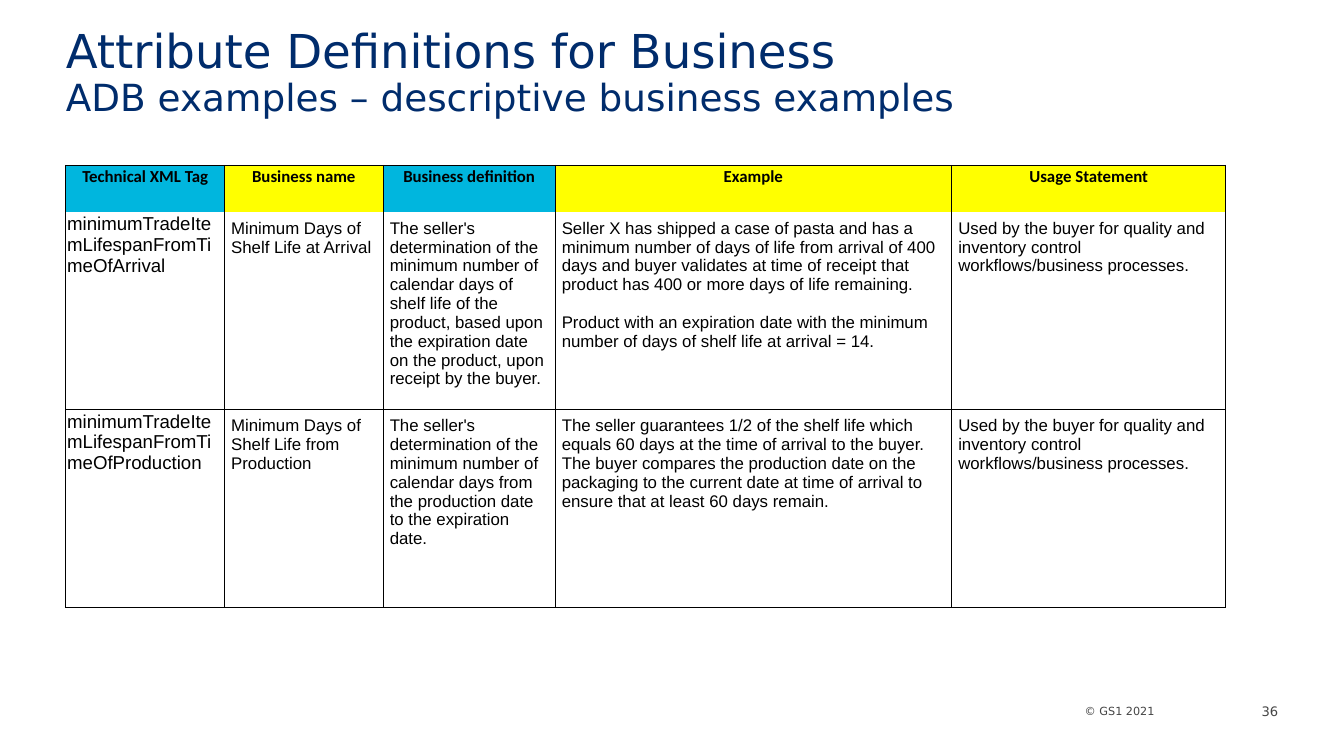
from dataclasses import dataclass

from lxml import etree
from pptx import Presentation
from pptx.dml.color import RGBColor
from pptx.enum.text import MSO_ANCHOR, MSO_AUTO_SIZE, PP_ALIGN
from pptx.oxml.ns import qn
from pptx.util import Inches, Pt

LEFT, CENTER, RIGHT = PP_ALIGN.LEFT, PP_ALIGN.CENTER, PP_ALIGN.RIGHT
TOP, MIDDLE = MSO_ANCHOR.TOP, MSO_ANCHOR.MIDDLE
TITLE_ONLY = 5


@dataclass(frozen=True)
class Theme:
    navy: str = "002C6C"
    gray: str = "454545"
    black: str = "000000"
    cyan: str = "00B6DE"
    yellow: str = "FFFF00"
    display_font: str = "DejaVu Sans"
    header_font: str = "Calibri"
    body_font: str = "Arial"
    title_size: int = 25
    subtitle_size: int = 20
    tag_size: int = 10
    cell_size: int = 9
    number_size: int = 7
    copyright_size: int = 6
    border_width: float = 0.5


theme = Theme()


def write(frame, lines, font, size, color, alignment=LEFT, bold=False, gap=0):
    """Fill a text frame with one paragraph per line, gap points apart."""
    frame.word_wrap = True
    for index, line in enumerate(lines):
        paragraph = frame.paragraphs[0] if index == 0 else frame.add_paragraph()
        paragraph.text = line
        paragraph.alignment = alignment
        if index:
            paragraph.space_before = Pt(gap)
        paragraph.font.name = font
        paragraph.font.size = Pt(size)
        paragraph.font.bold = bold
        paragraph.font.color.rgb = RGBColor.from_string(color)


def set_borders(cell, visible_sides):
    properties = cell._tc.get_or_add_tcPr()
    for side in "LRTB":
        line = etree.SubElement(properties, qn(f"a:ln{side}"), w=str(Pt(theme.border_width)))
        if side in visible_sides:
            fill = etree.SubElement(line, qn("a:solidFill"))
            etree.SubElement(fill, qn("a:srgbClr"), val=theme.black)
        else:
            etree.SubElement(line, qn("a:noFill"))


presentation = Presentation()
presentation.slide_width = Inches(10)
presentation.slide_height = Inches(10 * 9 / 16)
slide = presentation.slides.add_slide(presentation.slide_layouts[TITLE_ONLY])

# Title
title = slide.shapes.title
title.left, title.top = Inches(0.49), Inches(0.18)
title.width, title.height = Inches(9.02), Inches(0.74)
frame = title.text_frame
frame.auto_size = MSO_AUTO_SIZE.NONE
frame.vertical_anchor = MIDDLE
frame.margin_left, frame.margin_right = 0, Inches(0.1)
frame.margin_top = frame.margin_bottom = Inches(0.05)
write(frame, ["Attribute Definitions for Business"],
      theme.display_font, theme.title_size, theme.navy)
paragraph = frame.paragraphs[0]
paragraph.line_spacing = 0.9
paragraph.add_line_break()
subtitle = paragraph.add_run()
subtitle.text = "ADB examples – descriptive business examples"
subtitle.font.size = Pt(theme.subtitle_size)

# Attribute table
usage = "Used by the buyer for quality and inventory control workflows/business processes."
headers = [
    ("Technical XML Tag", theme.cyan),
    ("Business name", theme.yellow),
    ("Business definition", theme.cyan),
    ("Example", theme.yellow),
    ("Usage Statement", theme.yellow),
]
attributes = [
    [
        ["minimumTradeItemLifespanFromTimeOfArrival"],
        ["Minimum Days of Shelf Life at Arrival"],
        ["The seller's determination of the minimum number of calendar days of shelf life of "
         "the product, based upon the expiration date on the product, upon receipt by the buyer."],
        ["Seller X has shipped a case of pasta and has a minimum number of days of life from "
         "arrival of 400 days and buyer validates at time of receipt that product has 400 or "
         "more days of life remaining.",
         "Product with an expiration date with the minimum number of days of shelf life at "
         "arrival = 14."],
        [usage],
    ],
    [
        ["minimumTradeItemLifespanFromTimeOfProduction"],
        ["Minimum Days of Shelf Life from Production"],
        ["The seller's determination of the minimum number of calendar days from the "
         "production date to the expiration date."],
        ["The seller guarantees 1/2 of the shelf life which equals 60 days at the time of "
         "arrival to the buyer. The buyer compares the production date on the packaging to "
         "the current date at time of arrival to ensure that at least 60 days remain."],
        [usage],
    ],
]
column_widths = [1.18, 1.18, 1.28, 2.95, 2.04]
row_heights = [0.35, 1.47, 1.47]

table = slide.shapes.add_table(
    len(row_heights), len(column_widths), Inches(0.49), Inches(1.23),
    Inches(sum(column_widths)), Inches(sum(row_heights))).table
table.first_row = False
table.horz_banding = False
for column, width in zip(table.columns, column_widths):
    column.width = Inches(width)
for row, height in zip(table.rows, row_heights):
    row.height = Inches(height)

visible_sides = ["LRT", "LRB", "LRTB"]
rows = [[[text] for text, _ in headers]] + attributes
for row_index, row in enumerate(rows):
    for column_index, lines in enumerate(row):
        cell = table.cell(row_index, column_index)
        is_header, is_tag = row_index == 0, column_index == 0
        tight = is_header or is_tag
        cell.margin_left = cell.margin_right = cell.margin_top = Inches(0.01 if tight else 0.05)
        cell.margin_bottom = Inches(0 if tight else 0.05)
        cell.vertical_anchor = TOP
        set_borders(cell, visible_sides[row_index])
        if is_header:
            cell.fill.solid()
            cell.fill.fore_color.rgb = RGBColor.from_string(headers[column_index][1])
        else:
            cell.fill.background()
        write(cell.text_frame, lines,
              theme.header_font if is_header else theme.body_font,
              theme.tag_size if is_tag and not is_header else theme.cell_size,
              theme.black, CENTER if is_header else LEFT, is_header, gap=10)

# Footer
footers = [
    ("© GS1 2021", theme.copyright_size, TOP, 5.56, 5.24, 3.03, 0.11),
    ("36", theme.number_size, MIDDLE, 9.24, 5.21, 0.27, 0.16),
]
for text, size, anchor, *box in footers:
    frame = slide.shapes.add_textbox(*map(Inches, box)).text_frame
    frame.margin_left = frame.margin_right = frame.margin_top = frame.margin_bottom = 0
    frame.vertical_anchor = anchor
    write(frame, [text], theme.display_font, size, theme.gray, RIGHT)

presentation.save("out.pptx")
